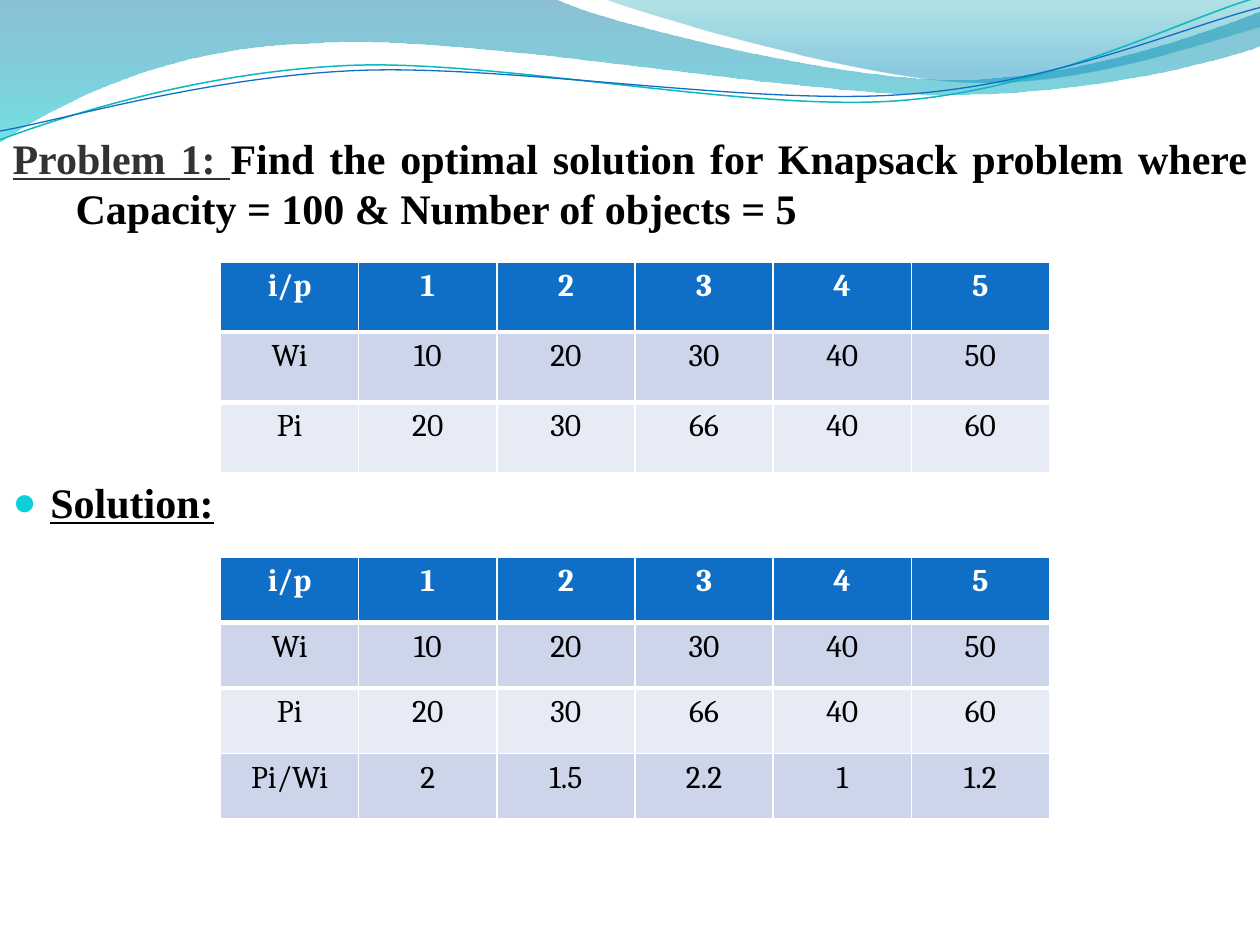
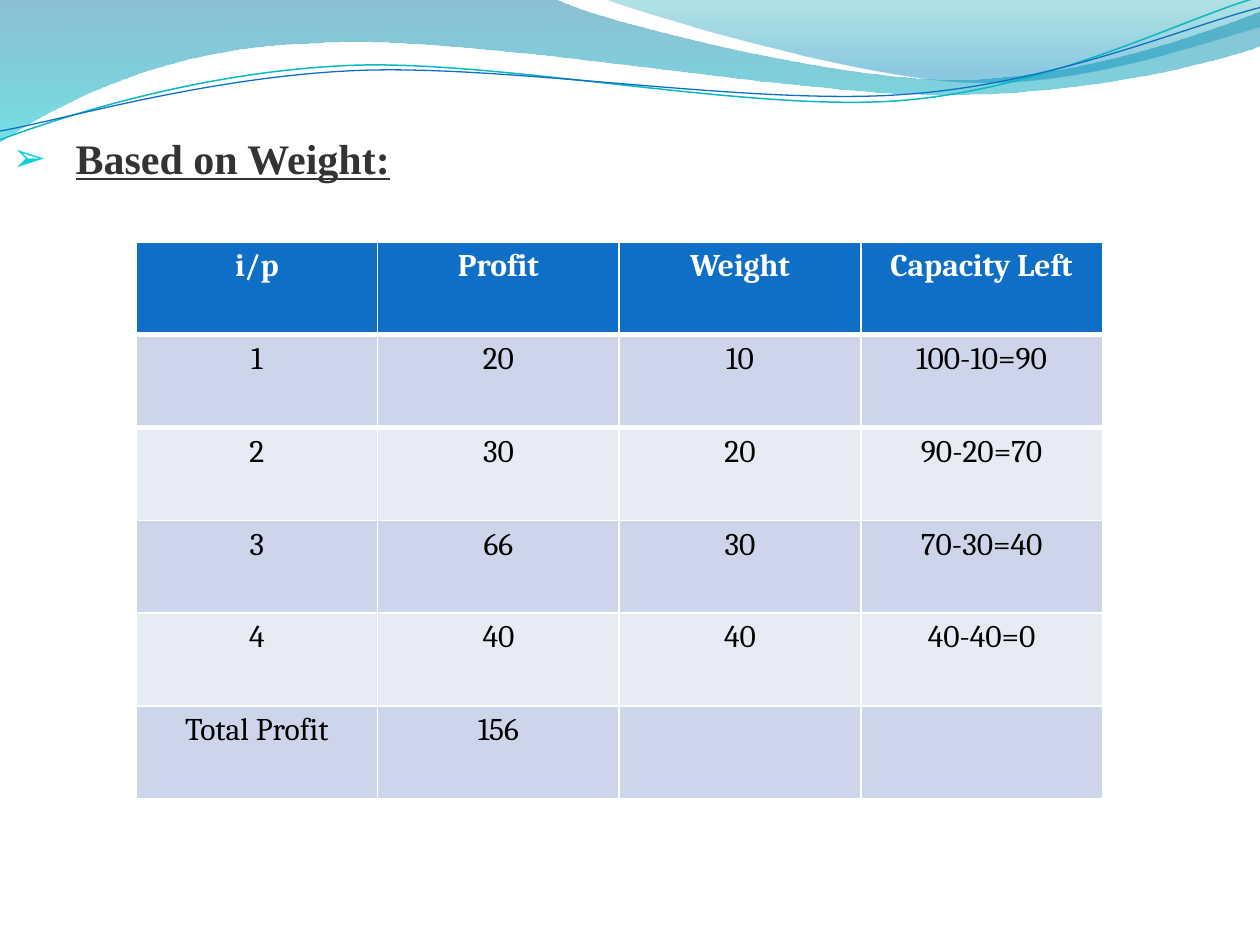
from lxml import etree
from pptx import Presentation
from pptx.dml import color
from pptx.enum import text
from pptx.oxml import ns
from pptx.util import Inches, Pt

HEADER, BAND_DARK, BAND_LIGHT = "0F6FC6", "CCD5EA", "E7EBF5"
WHITE, BLACK, GREY, BULLET = "FFFFFF", "000000", "333333", "0BD0D9"

OBJECTS = [
    ["i/p", "1", "2", "3", "4", "5"],
    ["Wi", "10", "20", "30", "40", "50"],
    ["Pi", "20", "30", "66", "40", "60"],
]
RATIOS = ["Pi/Wi", "2", "1.5", "2.2", "1", "1.2"]
BY_WEIGHT = [
    ["i/p", "Profit", "Weight", "Capacity Left"],
    ["1", "20", "10", "100-10=90"],
    ["2", "30", "20", "90-20=70"],
    ["3", "66", "30", "70-30=40"],
    ["4", "40", "40", "40-40=0"],
    ["Total Profit", "156", "", ""],
]

PROBLEM = [
    ("Problem 1: ", GREY, True),
    ("Find the optimal solution for Knapsack problem where "
     "Capacity = 100 & Number of objects = 5", BLACK, False),
]
SLIDES = [
    {
        "paragraphs": [
            {"runs": PROBLEM, "indent": 0.5, "bullet": None, "before": 0},
            {"runs": [("Solution:", BLACK, True)],
             "indent": 0.3, "bullet": "●", "before": 139},
        ],
        "tables": [
            (OBJECTS, (1.75, 2.08, 6.58, 1.67)),
            (OBJECTS + [RATIOS], (1.75, 4.42, 6.58, 2.08)),
        ],
    },
    {
        "paragraphs": [
            {"runs": [("Based on Weight:", GREY, True)],
             "indent": 0.5, "bullet": "➢", "before": 0},
        ],
        "tables": [(BY_WEIGHT, (1.08, 1.92, 7.67, 4.42))],
    },
]

# Each segment is a line to one point or a curve through two handles to an end.
WAVES = [
    {
        "start": (0, 0),
        "segments": [
            [(4.4, -0.01)],
            [(4.76, 0.17), (6.64, 0.63), (7.58, 0.63)],
            [(8.53, 0.63), (9.58, 0.26), (10, 0.09)],
            [(10.01, 0.36)],
            [(9.83, 0.44), (8.7, 0.76), (7.46, 0.75)],
            [(6.22, 0.75), (3.82, 0.28), (2.57, 0.34)],
            [(1.29, 0.36), (0.46, 0.83), (-0.01, 1.13)],
            [(0, 0)],
        ],
        "stops": [(0, "0074A1", 45), (100, "00C6CF", 55)],
    },
    {
        "start": (4.79, -0.01),
        "segments": [
            [(5.09, 0.11), (6.82, 0.62), (7.69, 0.65)],
            [(8.56, 0.69), (9.61, 0.32), (10, 0.21)],
            [(10, 0)],
            [(4.79, -0.01)],
        ],
        "stops": [(0, "00A1A9", 30), (80, "008BBF", 45)],
    },
    {
        "start": (0, 1.11),
        "segments": [
            [(0.48, 0.93), (1.58, 0.57), (2.77, 0.52)],
            [(3.95, 0.47), (5.93, 0.89), (7.13, 0.8)],
            [(8.33, 0.71), (9.38, 0.15), (9.98, -0.02)],
        ],
        "line": ("0AB8BF", 0.85),
    },
    {
        "start": (0, 1.04),
        "segments": [
            [(0.47, 0.96), (1.64, 0.61), (2.83, 0.56)],
            [(4.03, 0.51), (5.97, 0.84), (7.17, 0.75)],
            [(8.36, 0.67), (9.41, 0.21), (10, 0.06)],
        ],
        "line": ("0F6FC6", 0.75),
    },
]


def rgb(value):
    return color.RGBColor.from_string(value)


def add_xml(parent, tag, **attributes):
    return etree.SubElement(parent, ns.qn(tag), attributes)


def bend_segments(sp, segments):
    outline = next(sp.element.iter(ns.qn("a:path")))
    lines = iter(outline.findall(ns.qn("a:lnTo")))
    for segment in segments:
        first, *others = [next(lines) for _ in segment]
        if others:
            curve = etree.Element(ns.qn("a:cubicBezTo"))
            first.addprevious(curve)
            for line in (first, *others):
                curve.append(line[0])
                outline.remove(line)


def set_gradient(sp, stops):
    grad = etree.Element(ns.qn("a:gradFill"), rotWithShape="1")
    gs_list = add_xml(grad, "a:gsLst")
    for position, value, alpha in stops:
        gs = add_xml(gs_list, "a:gs", pos=str(position * 1000))
        clr = add_xml(gs, "a:srgbClr", val=value)
        add_xml(clr, "a:alpha", val=str(alpha * 1000))
    add_xml(grad, "a:lin", ang="5400000", scaled="0")
    sp.element.spPr.insert(2, grad)


def add_waves(slide, layout):
    for number, wave in enumerate(WAVES, 1):
        points = [wave["start"]] + sum(wave["segments"], [])
        points = [(Inches(x), Inches(y)) for x, y in points]
        builder = slide.shapes.build_freeform(*points[0])
        builder.add_line_segments(points[1:], close="stops" in wave)
        sp = builder.convert_to_shape()
        bend_segments(sp, wave["segments"])
        sp.name = f"Wave {number}"
        sp.shadow.inherit = False
        if "stops" in wave:
            set_gradient(sp, wave["stops"])
            sp.line.fill.background()
        else:
            value, width = wave["line"]
            sp.fill.background()
            sp.line.color.rgb = rgb(value)
            sp.line.width = Pt(width)
        sp.element.nvSpPr.cNvPr.set("id", str(100 + number))
        layout.shapes.element.append(sp.element)


def set_indent(p, indent, bullet):
    pPr = p._p.get_or_add_pPr()
    pPr.set("marL", str(Inches(indent)))
    pPr.set("indent", str(-Inches(indent)))
    if bullet:
        add_xml(add_xml(pPr, "a:buClr"), "a:srgbClr", val=BULLET)
        add_xml(pPr, "a:buSzPct", val="95000")
        add_xml(pPr, "a:buFont", typeface="Arial")
        add_xml(pPr, "a:buChar", char=bullet)
    else:
        add_xml(pPr, "a:buNone")


def fill_body(sp, paragraphs):
    sp.left, sp.top, sp.width, sp.height = (Inches(v) for v in (0, 0, 10, 7.5))
    tf = sp.text_frame
    tf.word_wrap = True
    tf.auto_size = text.MSO_AUTO_SIZE.NONE
    tf.vertical_anchor = text.MSO_ANCHOR.TOP
    tf.margin_top = Inches(1.05)
    for i, content in enumerate(paragraphs):
        p = tf.add_paragraph() if i else tf.paragraphs[0]
        set_indent(p, content["indent"], content["bullet"])
        p.alignment = text.PP_ALIGN.JUSTIFY
        p.space_before = Pt(content["before"])
        p.font.name, p.font.size, p.font.bold = "Times New Roman", Pt(24), True
        for words, value, underline in content["runs"]:
            r = p.add_run()
            r.text = words
            r.font.color.rgb = rgb(value)
            r.font.underline = underline


def set_border(cell, tag, points):
    ln = etree.Element(ns.qn(tag), w=str(Pt(points)))
    add_xml(add_xml(ln, "a:solidFill"), "a:srgbClr", val=WHITE)
    cell._tc.get_or_add_tcPr().insert(0, ln)


def add_table(slide, rows, box):
    left, top, width, height = (Inches(v) for v in box)
    table = slide.shapes.add_table(
        len(rows), len(rows[0]), left, top, width, height).table
    for i, row in enumerate(rows):
        fill = HEADER if i == 0 else BAND_DARK if i % 2 else BAND_LIGHT
        for j, content in enumerate(row):
            cell = table.cell(i, j)
            cell.fill.solid()
            cell.fill.fore_color.rgb = rgb(fill)
            if i < 2:
                set_border(cell, "a:lnT" if i else "a:lnB", 3)
            if not content:
                continue
            cell.text = content
            p = cell.text_frame.paragraphs[0]
            p.alignment = text.PP_ALIGN.CENTER
            p.font.name, p.font.size, p.font.bold = "Cambria", Pt(18), i == 0
            p.font.color.rgb = rgb(BLACK if i else WHITE)


def main():
    prs = Presentation()
    prs.slide_width, prs.slide_height = Inches(10), Inches(7.5)
    layout = prs.slide_layouts[1]
    for index, content in enumerate(SLIDES):
        slide = prs.slides.add_slide(layout)
        if index == 0:
            add_waves(slide, layout)
        title, body = slide.placeholders
        title.element.getparent().remove(title.element)
        fill_body(body, content["paragraphs"])
        for rows, box in content["tables"]:
            add_table(slide, rows, box)
    prs.save("out.pptx")


if __name__ == "__main__":
    main()
